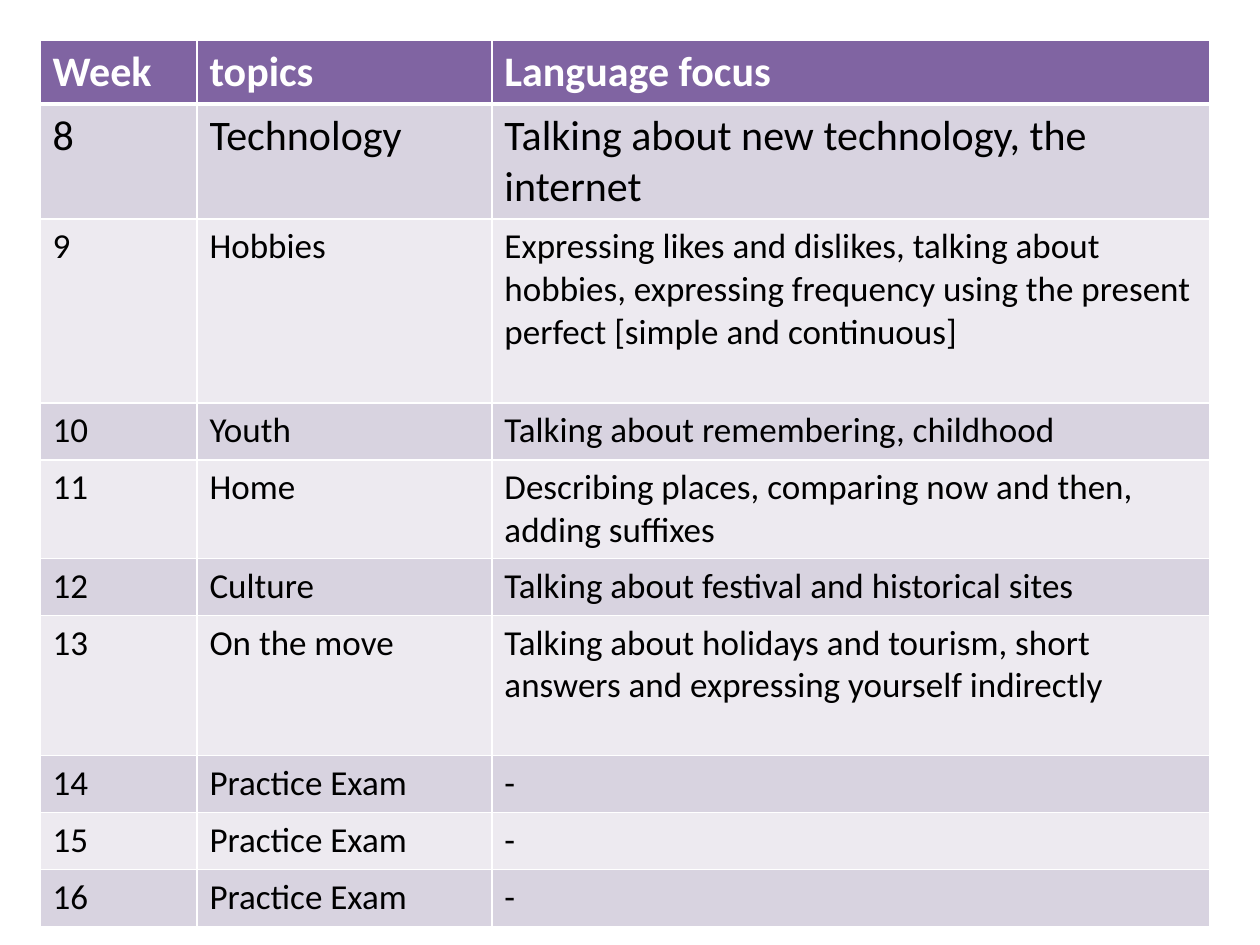
from lxml import etree
from pptx import Presentation
from pptx.dml.color import RGBColor
from pptx.oxml.ns import qn
from pptx.util import Emu, Pt

PX = 914400 // 126
WHITE = RGBColor(0xFF, 0xFF, 0xFF)
BLACK = RGBColor(0, 0, 0)
PURPLE = RGBColor(0x80, 0x64, 0xA2)
BANDS = [RGBColor(0xED, 0xEA, 0xF0), RGBColor(0xD8, 0xD3, 0xE0)]
FONT = "Calibri"

COLS = [157, 295, 718]
HEAD = ("Week", "topics", "Language focus")
# Row height, topic, language focus; weeks count up from 8
WEEKS = [
    (115, "Technology", "Talking about new technology, the internet"),
    (184, "Hobbies", "Expressing likes and dislikes, talking about hobbies, "
     "expressing frequency using the present perfect [simple and continuous]"),
    (57, "Youth", "Talking about remembering, childhood"),
    (98, "Home", "Describing places, comparing now and then, adding suffixes"),
    (57, "Culture", "Talking about festival and historical sites"),
    (140, "On the move", "Talking about holidays and tourism, short answers "
     "and expressing yourself indirectly"),
] + [(57, "Practice Exam", "-")] * 3


def px(n):
    return Emu(n * PX)


def add_edges(cell, widths):
    """Draw white left, right, top and bottom borders, widths in points."""
    props = cell._tc.get_or_add_tcPr()
    for i, (side, width) in enumerate(zip("LRTB", widths)):
        line = etree.Element(qn(f"a:ln{side}"), w=str(Pt(width)))
        fill = etree.SubElement(line, qn("a:solidFill"))
        etree.SubElement(fill, qn("a:srgbClr"), val=str(WHITE))
        props.insert(i, line)


def fill_cell(cell, text, size, color, back, bold, edges):
    cell.text = text
    font = cell.text_frame.paragraphs[0].font
    font.name, font.size, font.bold = FONT, Pt(size), bold
    font.color.rgb = color
    cell.fill.solid()
    cell.fill.fore_color.rgb = back
    add_edges(cell, edges)


def fill_row(table, row, texts):
    head = row == 0
    size = 24 if row < 2 else 20
    color, back = (WHITE, PURPLE) if head else (BLACK, BANDS[row % 2])
    edges = (1, 1, 3 if row == 1 else 1, 3 if head else 1)
    for col, text in enumerate(texts):
        fill_cell(table.cell(row, col), text, size, color, back, head, edges)


def add_plan(slide):
    heights = [63] + [week[0] for week in WEEKS]
    rows = [HEAD] + [(str(n), topic, focus)
                     for n, (_, topic, focus) in enumerate(WEEKS, 8)]
    frame = slide.shapes.add_table(len(rows), len(COLS), px(40), px(40),
                                   px(sum(COLS)), px(sum(heights)))
    table = frame.table
    for col, width in zip(table.columns, COLS):
        col.width = px(width)
    for i, texts in enumerate(rows):
        table.rows[i].height = px(heights[i])
        fill_row(table, i, texts)


def main():
    deck = Presentation()
    deck.slide_width, deck.slide_height = px(1260), px(945)
    add_plan(deck.slides.add_slide(deck.slide_layouts[6]))
    deck.save("out.pptx")


if __name__ == "__main__":
    main()
